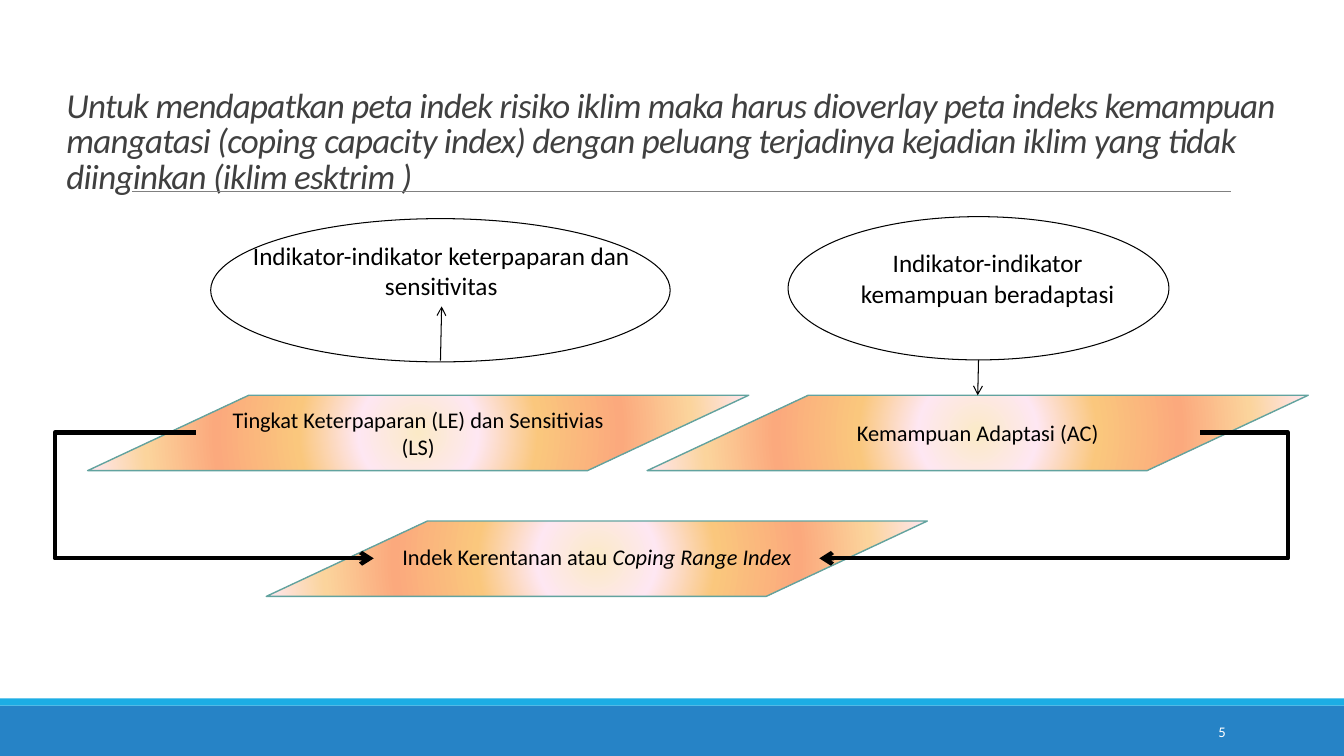
from pptx import Presentation
from pptx.dml.color import RGBColor
from pptx.enum.shapes import MSO_CONNECTOR as CXN, MSO_SHAPE as SHAPE
from pptx.enum.text import MSO_ANCHOR as ANCHOR, MSO_AUTO_SIZE as AUTO, PP_ALIGN as ALIGN
from pptx.oxml import parse_xml
from pptx.oxml.ns import nsdecls
from pptx.util import Cm, Pt

COLORS = {
    "bar": "2683C6", "strip": "1CADE4", "rule": "808080", "title": "404040",
    "border": "62A39F", "black": "000000", "white": "FFFFFF",
}
# Radial fill of the parallelograms, from the centre outwards
STOPS = {0: "FBEAC7", 18: "FEE7F2", 36: "FAC77D", 61: "FBA97D", 82: "FBD49C", 100: "FEE7F2"}


def rgb(name):
    return RGBColor.from_string(COLORS[name])


def write(tf, runs, size, color="black", align=ALIGN.CENTER, anchor=ANCHOR.TOP):
    """Write one paragraph from (text, italic) pairs."""
    for name, value in {"word_wrap": True, "auto_size": AUTO.NONE,
                        "vertical_anchor": anchor}.items():
        setattr(tf, name, value)
    p = tf.paragraphs[0]
    p.alignment = align
    for text, italic in runs:
        r = p.add_run()
        r.text = text
        for name, value in {"name": "Calibri", "size": Pt(size), "italic": italic}.items():
            setattr(r.font, name, value)
        r.font.color.rgb = rgb(color)
    return p


def add_title(s, text):
    title = s.shapes.title
    for name, value in {"left": 1.42, "top": 0.2, "width": 31.9, "height": 4.88}.items():
        setattr(title, name, Cm(value))
    p = write(title.text_frame, [(text, True)], 25, "title", ALIGN.LEFT, ANCHOR.BOTTOM)
    p.line_spacing = 0.85
    p.runs[0].font._element.set("spc", "-50")


def add_text(s, box, text, size, **formats):
    sp = s.shapes.add_textbox(*map(Cm, box))
    write(sp.text_frame, [(text, False)], size, **formats)


def add_shape(s, kind, box, fill=None, line=None, width=0.75):
    sp = s.shapes.add_shape(kind, *map(Cm, box))
    sp.shadow.inherit = False
    if fill:
        sp.fill.solid()
        sp.fill.fore_color.rgb = rgb(fill)
    else:
        sp.fill.background()
    if line:
        sp.line.color.rgb = rgb(line)
        sp.line.width = Pt(width)
    else:
        sp.line.fill.background()
    return sp


def add_index(s, left, top, runs):
    """Add a parallelogram with a radial gradient and centred text."""
    sp = add_shape(s, SHAPE.PARALLELOGRAM, (left, top, 16.66, 1.9), line="border", width=1)
    sp.adjustments[0] = 2.138
    stops = "".join(f'<a:gs pos="{pos * 1000}"><a:srgbClr val="{color}"/></a:gs>'
                    for pos, color in STOPS.items())
    gradient = parse_xml(
        f'<a:gradFill {nsdecls("a")} rotWithShape="1"><a:gsLst>{stops}</a:gsLst>'
        '<a:path path="circle"><a:fillToRect l="50000" t="50000" r="50000" b="50000"/>'
        '</a:path></a:gradFill>')
    spPr = sp._element.spPr
    spPr.replace(spPr.find("{*}noFill"), gradient)
    return write(sp.text_frame, runs, 16, anchor=ANCHOR.MIDDLE)


def add_line(s, points, color="black", width=0.75, arrow=True, bend=None):
    kind = CXN.STRAIGHT if bend is None else CXN.ELBOW
    cxn = s.shapes.add_connector(kind, *map(Cm, points))
    cxn.line.color.rgb = rgb(color)
    cxn.line.width = Pt(width)
    spPr = cxn._element.spPr
    if arrow:
        cxn.line._get_or_add_ln().append(parse_xml(f'<a:tailEnd {nsdecls("a")} type="arrow"/>'))
    if bend is not None:
        spPr.find("{*}prstGeom").find("{*}avLst").append(parse_xml(
            f'<a:gd {nsdecls("a")} name="adj1" fmla="val {round(bend * 100000)}"/>'))
    spPr.append(parse_xml(f'<a:effectLst {nsdecls("a")}/>'))


def main():
    prs = Presentation()
    prs.slide_width, prs.slide_height = Cm(33.87), Cm(19.05)
    s = prs.slides.add_slide(prs.slide_layouts[5])

    # Footer bars, rule and title
    add_shape(s, SHAPE.RECTANGLE, (0, 17.78, 33.87, 1.27), "bar")
    add_shape(s, SHAPE.RECTANGLE, (0, 17.6, 33.87, 0.18), "strip")
    add_line(s, (3.33, 4.83, 31.01, 4.83), "rule", 0.5, arrow=False)
    add_title(s, "Untuk mendapatkan peta indek risiko iklim maka harus dioverlay peta indeks "
                 "kemampuan mangatasi (coping capacity index) dengan peluang terjadinya "
                 "kejadian iklim yang tidak diinginkan (iklim esktrim )")

    # Indices
    add_index(s, 2.21, 9.96, [("Tingkat Keterpaparan (LE) dan Sensitivias (LS)", False)])
    add_index(s, 16.31, 9.96, [("Kemampuan Adaptasi (AC)", False)])
    p = add_index(s, 6.71, 13.13, [("Indek Kerentanan atau ", False),
                                   ("Coping Range Index", True)])
    p.line_spacing = Pt(16)

    # Elbow arrows into the combined index
    add_line(s, (4.93, 10.9, 9.42, 14.07), width=3, bend=-0.79)
    add_line(s, (30.25, 10.9, 20.65, 14.07), width=3, bend=-0.23)

    # Indicators
    for text, text_box, oval in (
        ("Indikator-indikator keterpaparan dan sensitivitas",
         (6.12, 5.92, 10, 1.8), (5.31, 5.51, 11.58, 3.61)),
        ("Indikator-indikator kemampuan beradaptasi",
         (20.75, 6.12, 8.28, 1.8), (19.86, 5.46, 9.6, 3.61)),
    ):
        add_text(s, text_box, text, 18)
        add_shape(s, SHAPE.OVAL, oval, line="black")
    add_line(s, (11.1, 9.09, 11.13, 7.72))
    add_line(s, (24.66, 9.07, 24.64, 9.96))

    # Slide number
    add_text(s, (27.51, 17.93, 3.63, 1.02), "5", 10.5,
             color="white", align=ALIGN.RIGHT, anchor=ANCHOR.MIDDLE)
    prs.save("out.pptx")


if __name__ == "__main__":
    main()
